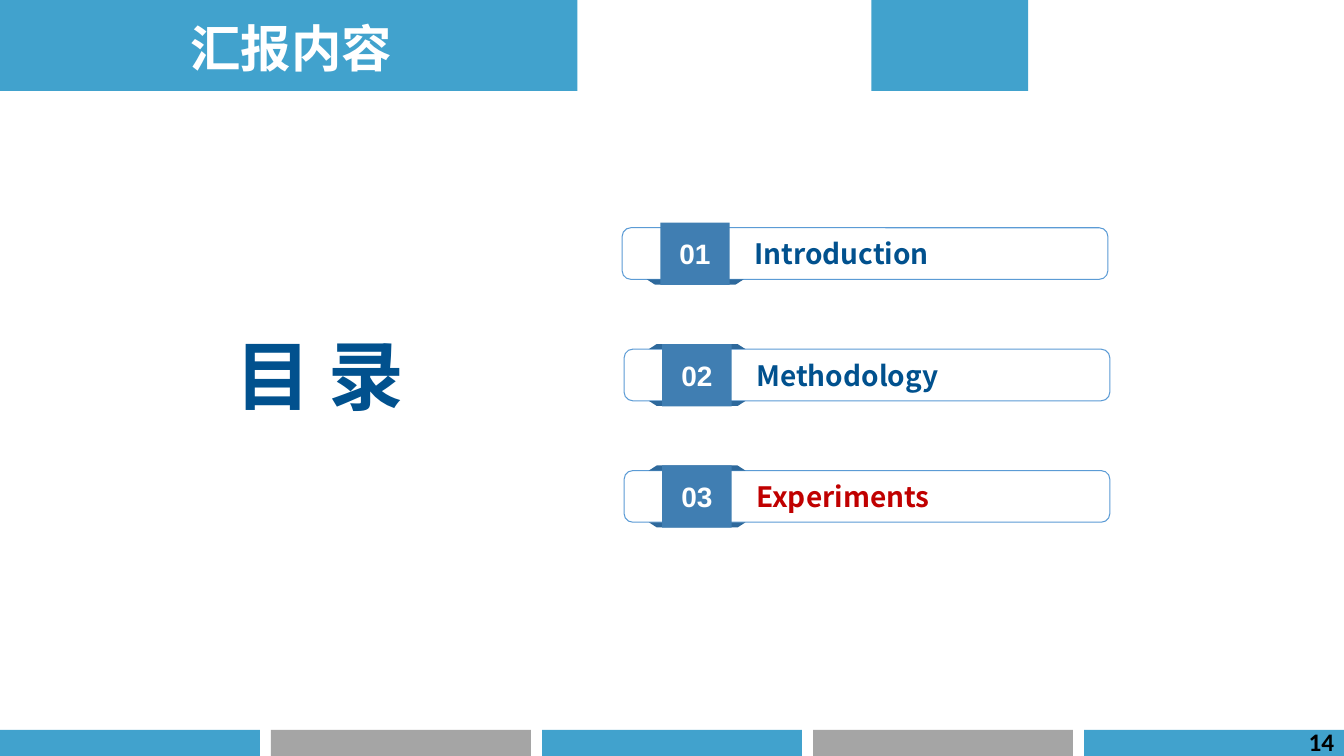
from dataclasses import dataclass

from lxml.etree import SubElement
from pptx import Presentation
from pptx.dml.color import RGBColor
from pptx.enum.shapes import MSO_SHAPE
from pptx.enum.text import MSO_ANCHOR, MSO_AUTO_SIZE, PP_ALIGN
from pptx.oxml.ns import qn
from pptx.shapes.autoshape import Shape
from pptx.slide import Slide
from pptx.util import Cm, Pt

SKY = RGBColor(0x41, 0xA2, 0xCD)
GRAY = RGBColor(0xA5, 0xA5, 0xA5)
OUTLINE = RGBColor(0x5B, 0x9B, 0xD5)
FOLD = RGBColor(0x2E, 0x69, 0x9C)
TAB = RGBColor(0x40, 0x7E, 0xB2)
NAVY = RGBColor(0x01, 0x51, 0x8E)
RED = RGBColor(0xC0, 0x00, 0x00)
WHITE = RGBColor(0xFF, 0xFF, 0xFF)
BLACK = RGBColor(0x00, 0x00, 0x00)
CHINESE_FONT = "Noto Sans CJK SC"


@dataclass(frozen=True)
class Box:
    """Left, top, width and height in centimetres."""
    left: float
    top: float
    width: float
    height: float

    def lengths(self) -> tuple[Cm, Cm, Cm, Cm]:
        return Cm(self.left), Cm(self.top), Cm(self.width), Cm(self.height)


@dataclass(frozen=True)
class TextStyle:
    size: int
    color: RGBColor
    font: str = CHINESE_FONT
    align: PP_ALIGN = PP_ALIGN.LEFT
    anchor: MSO_ANCHOR = MSO_ANCHOR.MIDDLE


@dataclass(frozen=True)
class Chapter:
    number: str
    name: str
    left: float
    color: RGBColor = NAVY
    top_fold: bool = True


CHAPTERS = (
    Chapter("01", "Introduction", 15.68, top_fold=False),
    Chapter("02", "Methodology", 15.73),
    Chapter("03", "Experiments", 15.73, color=RED),
)
FIRST_CHAPTER_TOP = 5.74
CHAPTER_STEP = 3.06
FOOTER_STEP = 6.83


def write(shape: Shape, text: str, style: TextStyle) -> None:
    frame = shape.text_frame
    frame.text = text
    frame.word_wrap = True
    frame.vertical_anchor = style.anchor
    paragraph = frame.paragraphs[0]
    paragraph.alignment = style.align
    span = paragraph.runs[0]
    span.font.size = Pt(style.size)
    span.font.bold = True
    span.font.color.rgb = style.color
    span.font.name = style.font
    east_asian = SubElement(span.font._element, qn("a:ea"))
    east_asian.set("typeface", style.font)


def add_block(page: Slide, box: Box, fill: RGBColor,
              kind: MSO_SHAPE = MSO_SHAPE.RECTANGLE) -> Shape:
    block = page.shapes.add_shape(kind, *box.lengths())
    block.shadow.inherit = False
    block.fill.solid()
    block.fill.fore_color.rgb = fill
    block.line.fill.background()
    return block


def add_label(page: Slide, box: Box, text: str, style: TextStyle) -> None:
    write(page.shapes.add_textbox(*box.lengths()), text, style)


def add_fold(page: Slide, left: float, top: float, rotation: int) -> None:
    fold = add_block(page, Box(left, top, 2.44, 0.13), FOLD, MSO_SHAPE.TRAPEZOID)
    fold.adjustments[0] = 1.55
    fold.rotation = rotation


def add_chapter(page: Slide, chapter: Chapter, top: float) -> None:
    left = chapter.left
    frame = add_block(page, Box(left, top, 12.24, 1.3), WHITE,
                      MSO_SHAPE.ROUNDED_RECTANGLE)
    frame.fill.background()
    frame.line.color.rgb = OUTLINE
    frame.line.width = Pt(0.75)

    # Ribbon folded around the frame
    add_fold(page, left + 0.62, top + 1.3, 180)
    if chapter.top_fold:
        add_fold(page, left + 0.62, top - 0.13, 0)
    tab = add_block(page, Box(left + 0.96, top - 0.13, 1.75, 1.57), TAB)
    write(tab, chapter.number, TextStyle(20, WHITE, "Arial", PP_ALIGN.CENTER))

    add_label(page, Box(left + 3.08, top - 0.02, 9.1, 1.35), chapter.name,
              TextStyle(20, chapter.color))


def main() -> None:
    deck = Presentation()
    deck.slide_width, deck.slide_height = Cm(33.87), Cm(19.05)
    page = deck.slides.add_slide(deck.slide_layouts[5])

    # Header and footer bands
    add_block(page, Box(0, 0, 14.55, 2.29), SKY)
    add_block(page, Box(21.96, 0, 3.95, 2.29), SKY)
    for index in range(5):
        add_block(page, Box(index * FOOTER_STEP, 18.39, 6.55, 0.66),
                  GRAY if index % 2 else SKY)

    # Title, raised above the header band
    title = page.shapes.title
    page.shapes.element.append(title.element)
    title.left, title.top, title.width, title.height = Box(1.88, 0.3, 10.92, 1.8).lengths()
    write(title, "汇报内容", TextStyle(36, WHITE, align=PP_ALIGN.CENTER,
                                   anchor=MSO_ANCHOR.TOP))
    title.text_frame.auto_size = MSO_AUTO_SIZE.NONE

    # Contents
    add_label(page, Box(5.69, 7.8, 5.18, 3.28), "目 录", TextStyle(54, NAVY))
    for index, chapter in enumerate(CHAPTERS):
        add_chapter(page, chapter, FIRST_CHAPTER_TOP + index * CHAPTER_STEP)

    # Page number
    add_label(page, Box(26.25, 18.19, 7.62, 1.02), "14",
              TextStyle(18, BLACK, "Calibri", PP_ALIGN.RIGHT, MSO_ANCHOR.TOP))

    deck.save("out.pptx")


if __name__ == "__main__":
    main()
